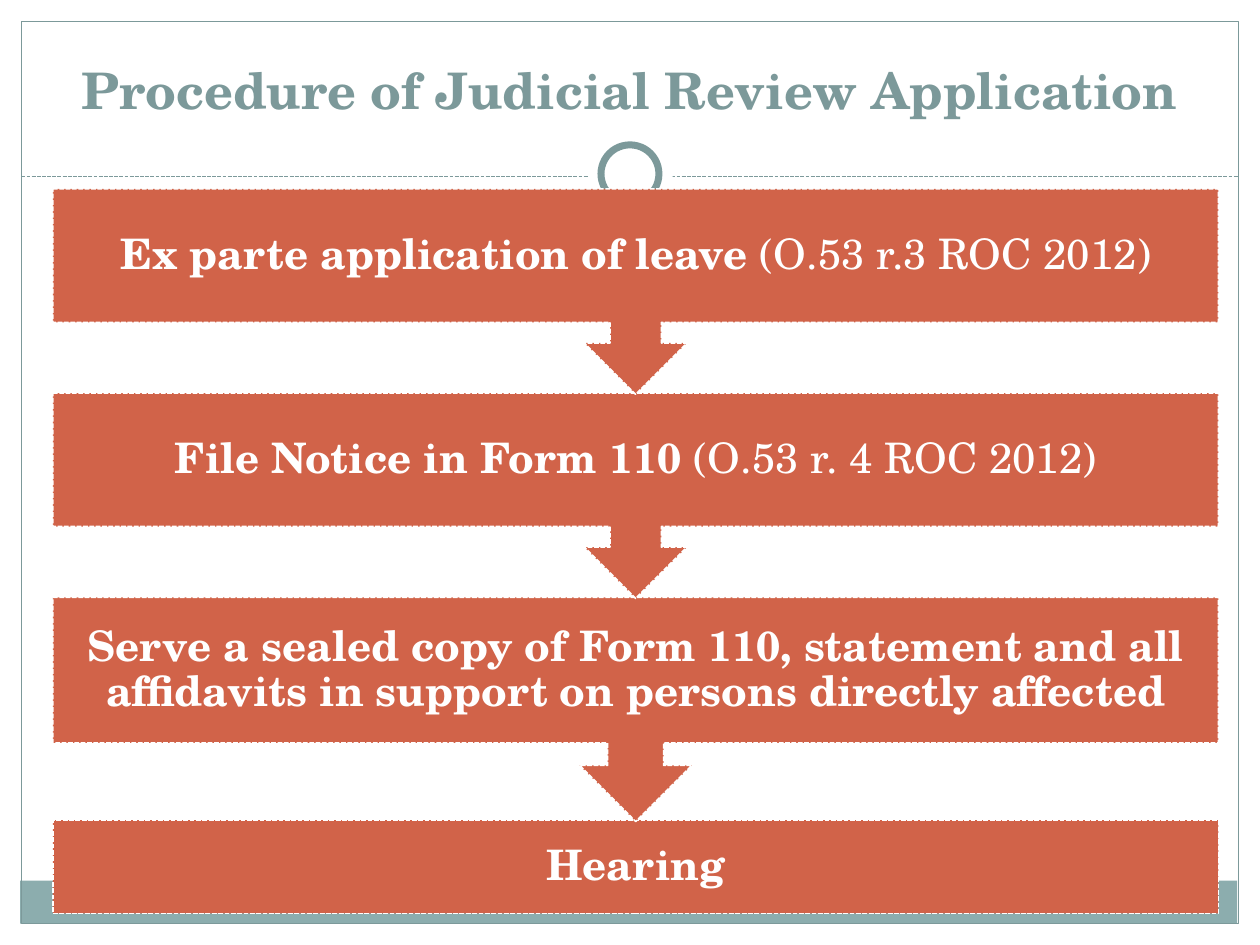
from pptx import Presentation
from pptx.dml.color import RGBColor
from pptx.enum import dml, shapes, text
from pptx.oxml.ns import qn
from pptx.util import Inches, Pt

FONT = "TeX Gyre Schola"
WHITE = RGBColor(0xFF, 0xFF, 0xFF)
TEAL = RGBColor(0x7C, 0x99, 0x9A)
BAND = RGBColor(0x8C, 0xAD, 0xAE)
RUST = RGBColor(0xD1, 0x63, 0x49)

BOX, CALLOUT = shapes.MSO_SHAPE.RECTANGLE, shapes.MSO_SHAPE.DOWN_ARROW_CALLOUT
DASH = dml.MSO_LINE.SQUARE_DOT  # written to the file as sysDash
STEP_LEFT, STEP_TOP, STEP_WIDTH = 0.42, 1.5, 9.25
OVERLAP = 0.01

# Preset, height, bold text, regular text
STEPS = [
    (CALLOUT, 1.63, "Ex parte application of leave ", "(O.53 r.3 ROC 2012)"),
    (CALLOUT, 1.63, "File Notice in Form 110 ", "(O.53 r. 4 ROC 2012)"),
    (CALLOUT, 1.78, "Serve a sealed copy of Form 110, statement and all "
                    "affidavits in support on persons directly affected", ""),
    (BOX, 0.74, "Hearing", ""),
]


def set_line(line, color, width, dash=None):
    line.color.rgb = color
    line.width = Pt(width)
    if dash:
        line.dash_style = dash


def add_shape(s, preset, left, top, width, height, fill=None):
    """Add a preset shape without shadow or line, unfilled if fill is None."""
    sp = s.shapes.add_shape(preset, Inches(left), Inches(top),
                            Inches(width), Inches(height))
    sp.shadow.inherit = False
    sp.line.fill.background()
    if fill is None:
        sp.fill.background()
    else:
        sp.fill.solid()
        sp.fill.fore_color.rgb = fill
    return sp


def add_run(p, words, size, color, bold):
    r = p.add_run()
    r.text = words
    r.font.name = FONT
    r.font.size = Pt(size)
    r.font.bold = bold
    r.font.color.rgb = color


def add_rule(s, left, right, y):
    line = s.shapes.add_connector(shapes.MSO_CONNECTOR.STRAIGHT, Inches(left),
                                  Inches(y), Inches(right), Inches(y))
    set_line(line.line, TEAL, 0.75, DASH)
    sp_pr = line._element.spPr
    sp_pr.append(sp_pr.makeelement(qn("a:effectLst"), {}))


def add_frame(s):
    """Draw the footer band, page border, dashed rule and ring."""
    add_shape(s, BOX, 0.16, 6.99, 9.66, 0.34, BAND)
    border = add_shape(s, BOX, 0.17, 0.17, 9.66, 7.16)
    set_line(border.line, TEAL, 0.75)
    add_rule(s, 0.17, 9.83, 1.4)
    oval = shapes.MSO_SHAPE.OVAL
    add_shape(s, oval, 4.67, 1.05, 0.67, 0.67, WHITE)
    ring = add_shape(s, oval, 4.77, 1.15, 0.46, 0.46, WHITE)
    set_line(ring.line, TEAL, 4)


def set_title(s, words):
    title = s.shapes.title
    title.left, title.top = Inches(0.33), Inches(0.17)
    title.width, title.height = Inches(9.33), Inches(0.83)
    tf = title.text_frame
    tf.auto_size = text.MSO_AUTO_SIZE.NONE
    tf.vertical_anchor = text.MSO_ANCHOR.BOTTOM
    p = tf.paragraphs[0]
    p.alignment = text.PP_ALIGN.CENTER
    add_run(p, words, 28.8, TEAL, True)


def add_step(s, preset, top, height, bold_text, plain_text):
    sp = add_shape(s, preset, STEP_LEFT, top, STEP_WIDTH, height, RUST)
    set_line(sp.line, WHITE, 0.9, DASH)
    tf = sp.text_frame
    tf.word_wrap = True
    tf.vertical_anchor = text.MSO_ANCHOR.MIDDLE
    tf.margin_left = tf.margin_right = Inches(0.19)
    tf.margin_top = tf.margin_bottom = Inches(0.19)
    p = tf.paragraphs[0]
    p.alignment = text.PP_ALIGN.CENTER
    p.line_spacing = 0.9
    add_run(p, bold_text, 24, WHITE, True)
    if plain_text:
        add_run(p, plain_text, 24, WHITE, False)


def main():
    prs = Presentation()
    prs.slide_width, prs.slide_height = Inches(10), Inches(7.5)
    s = prs.slides.add_slide(prs.slide_layouts[5])
    set_title(s, "Procedure of Judicial Review Application")
    add_frame(s)

    # Stack from the bottom up so that each arrow tip lies over the next box.
    bottom = STEP_TOP + sum(step[1] - OVERLAP for step in STEPS) + OVERLAP
    for preset, height, bold_text, plain_text in reversed(STEPS):
        top = bottom - height
        add_step(s, preset, top, height, bold_text, plain_text)
        bottom = top + OVERLAP
    prs.save("out.pptx")


if __name__ == "__main__":
    main()
